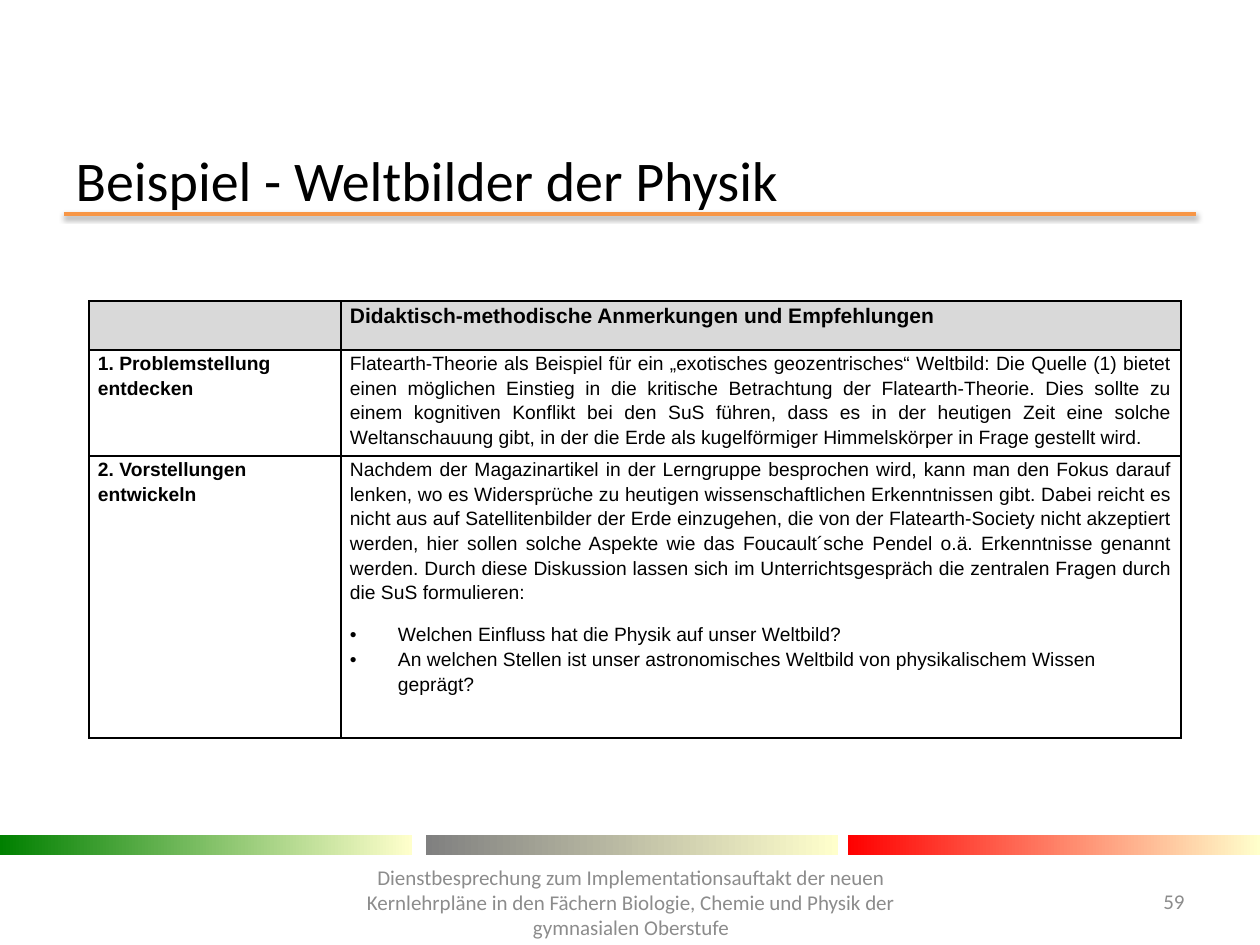
from lxml.etree import SubElement
from pptx import Presentation
from pptx.dml.color import RGBColor
from pptx.enum.shapes import MSO_CONNECTOR, MSO_SHAPE
from pptx.enum.text import MSO_ANCHOR, MSO_AUTO_SIZE, PP_ALIGN
from pptx.oxml import parse_xml
from pptx.oxml.ns import nsdecls, qn
from pptx.util import Emu, Pt

BLACK = RGBColor(0x00, 0x00, 0x00)
GREY = RGBColor(0x8C, 0x8C, 0x8C)
HEADER_FILL = RGBColor(0xD9, 0xD9, 0xD9)
ORANGE = RGBColor(0xF7, 0x96, 0x46)
CREAM = RGBColor(0xFF, 0xFF, 0xCC)
GREEN = RGBColor(0x00, 0x80, 0x00)
MID_GREY = RGBColor(0x80, 0x80, 0x80)
RED = RGBColor(0xFF, 0x00, 0x00)

EMU_PER_INCH, PX_PER_INCH = 914400, 126

TITLE = {"name": "Calibri", "size": Pt(32), "bold": False}
FOOTER = {"name": "Calibri", "size": Pt(12), "bold": False}
HEADER = {"name": "Arial", "size": Pt(12), "bold": True}
STEP = {"name": "Arial", "size": Pt(11), "bold": True}
BODY = {"name": "Arial", "size": Pt(11), "bold": False}

LEFT = {"line_spacing": 1.15}
JUSTIFIED = {"line_spacing": 1.15, "alignment": PP_ALIGN.JUSTIFY}
LEAD_IN = {**JUSTIFIED, "space_after": Pt(10)}


def px(n):
    return Emu(round(n * EMU_PER_INCH / PX_PER_INCH))


def set_values(target, values):
    for name, value in values.items():
        setattr(target, name, value)


class SlideBuilder:
    def __init__(self, slide):
        self.slide = slide

    def add_text(self, p, text, font, color=BLACK, layout=LEFT):
        set_values(p, layout)
        r = p.add_run()
        r.text = text
        set_values(r.font, font)
        r.font.color.rgb = color

    def title(self, box, text):
        sp = self.slide.shapes.title
        set_values(sp, dict(zip(("left", "top", "width", "height"), map(px, box))))
        tf = sp.text_frame
        set_values(tf, {"word_wrap": True, "auto_size": MSO_AUTO_SIZE.NONE,
                        "vertical_anchor": MSO_ANCHOR.MIDDLE})
        self.add_text(tf.paragraphs[0], text, TITLE,
                      layout={"alignment": PP_ALIGN.LEFT})

    def text_box(self, box, text, alignment):
        tf = self.slide.shapes.add_textbox(*map(px, box)).text_frame
        set_values(tf, {"word_wrap": True, "vertical_anchor": MSO_ANCHOR.MIDDLE})
        self.add_text(tf.paragraphs[0], text, FOOTER, GREY,
                      {"alignment": alignment})

    def rule(self, x1, x2, y):
        """Horizontal orange line with a soft shadow below it."""
        line = self.slide.shapes.add_connector(
            MSO_CONNECTOR.STRAIGHT, px(x1), px(y), px(x2), px(y))
        line.line.color.rgb = ORANGE
        line.line.width = Pt(2)
        line._element.spPr.append(parse_xml(
            f'<a:effectLst {nsdecls("a")}>'
            '<a:outerShdw blurRad="40000" dist="20000" dir="5400000" rotWithShape="0">'
            '<a:srgbClr val="000000"><a:alpha val="38000"/></a:srgbClr>'
            '</a:outerShdw></a:effectLst>'))

    def gradient_bar(self, box, color):
        sp = self.slide.shapes.add_shape(MSO_SHAPE.RECTANGLE, *map(px, box))
        sp.shadow.inherit = False
        sp.line.fill.background()
        sp.fill.gradient()
        sp.fill.gradient_angle = 0
        for stop, rgb in zip(sp.fill.gradient_stops, (color, CREAM)):
            stop.color.rgb = rgb

    def table(self, left, top, widths, heights):
        tbl = self.slide.shapes.add_table(
            len(heights), len(widths), px(left), px(top),
            px(sum(widths)), px(sum(heights))).table
        set_values(tbl, {"first_row": False, "horz_banding": False})
        for col, width in zip(tbl.columns, widths):
            col.width = px(width)
        for row, height in zip(tbl.rows, heights):
            row.height = px(height)
        for cell in tbl.iter_cells():
            set_values(cell, {"margin_left": px(9), "margin_right": px(9),
                              "margin_top": 0, "margin_bottom": 0})
            self.border(cell)
            cell.fill.background()
        for cell in tbl.rows[0].cells:
            cell.fill.solid()
            cell.fill.fore_color.rgb = HEADER_FILL
        return tbl

    def border(self, cell):
        tcPr = cell._tc.get_or_add_tcPr()
        for side in ("lnL", "lnR", "lnT", "lnB"):
            ln = SubElement(tcPr, qn(f"a:{side}"), w=str(Pt(1)))
            fill = SubElement(ln, qn("a:solidFill"))
            SubElement(fill, qn("a:srgbClr"), val=str(BLACK))

    def bullet(self, tf, text):
        p = tf.add_paragraph()
        pPr = p._p.get_or_add_pPr()
        pPr.set("marL", str(px(48)))
        pPr.set("indent", str(px(-48)))
        SubElement(pPr, qn("a:buFont"), typeface="Arial")
        SubElement(pPr, qn("a:buChar"), char="•")
        self.add_text(p, text, BODY)


def main():
    prs = Presentation()
    prs.slide_width, prs.slide_height = px(1260), px(945)
    s = SlideBuilder(prs.slides.add_slide(prs.slide_layouts[5]))

    s.rule(64, 1196, 214)
    for x, color in ((0, GREEN), (426, MID_GREY), (848, RED)):
        s.gradient_bar((x, 835, 412, 20), color)
    s.title((63, 155, 1134, 49), "Beispiel - Weltbilder der Physik")
    s.text_box((1116, 876, 81, 50), "59", PP_ALIGN.RIGHT)
    s.text_box((338, 866, 586, 72),
               "Dienstbesprechung zum Implementationsauftakt der neuen Kernlehrpläne "
               "in den Fächern Biologie, Chemie und Physik der gymnasialen Oberstufe",
               PP_ALIGN.CENTER)

    tbl = s.table(89, 301, (252, 840), (49, 98, 282))
    entries = (
        (0, 1, "Didaktisch-methodische Anmerkungen und Empfehlungen", HEADER, LEFT),
        (1, 0, "1. Problemstellung entdecken", STEP, LEFT),
        (1, 1,
         "Flatearth-Theorie als Beispiel für ein „exotisches geozentrisches“ "
         "Weltbild: Die Quelle (1) bietet einen möglichen Einstieg in die kritische "
         "Betrachtung der Flatearth-Theorie. Dies sollte zu einem kognitiven Konflikt "
         "bei den SuS führen, dass es in der heutigen Zeit eine solche "
         "Weltanschauung gibt, in der die Erde als kugelförmiger Himmelskörper in "
         "Frage gestellt wird.", BODY, JUSTIFIED),
        (2, 0, "2. Vorstellungen entwickeln", STEP, LEFT),
        (2, 1,
         "Nachdem der Magazinartikel in der Lerngruppe besprochen wird, kann man den "
         "Fokus darauf lenken, wo es Widersprüche zu heutigen wissenschaftlichen "
         "Erkenntnissen gibt. Dabei reicht es nicht aus auf Satellitenbilder der Erde "
         "einzugehen, die von der Flatearth-Society nicht akzeptiert werden, hier "
         "sollen solche Aspekte wie das Foucault´sche Pendel o.ä. Erkenntnisse "
         "genannt werden. Durch diese Diskussion lassen sich im Unterrichtsgespräch "
         "die zentralen Fragen durch die SuS formulieren:", BODY, LEAD_IN),
    )
    for row, col, text, font, layout in entries:
        p = tbl.cell(row, col).text_frame.paragraphs[0]
        s.add_text(p, text, font, layout=layout)
    for question in (
            "Welchen Einfluss hat die Physik auf unser Weltbild?",
            "An welchen Stellen ist unser astronomisches Weltbild von "
            "physikalischem Wissen geprägt?"):
        s.bullet(tbl.cell(2, 1).text_frame, question)

    prs.save("out.pptx")


if __name__ == "__main__":
    main()
